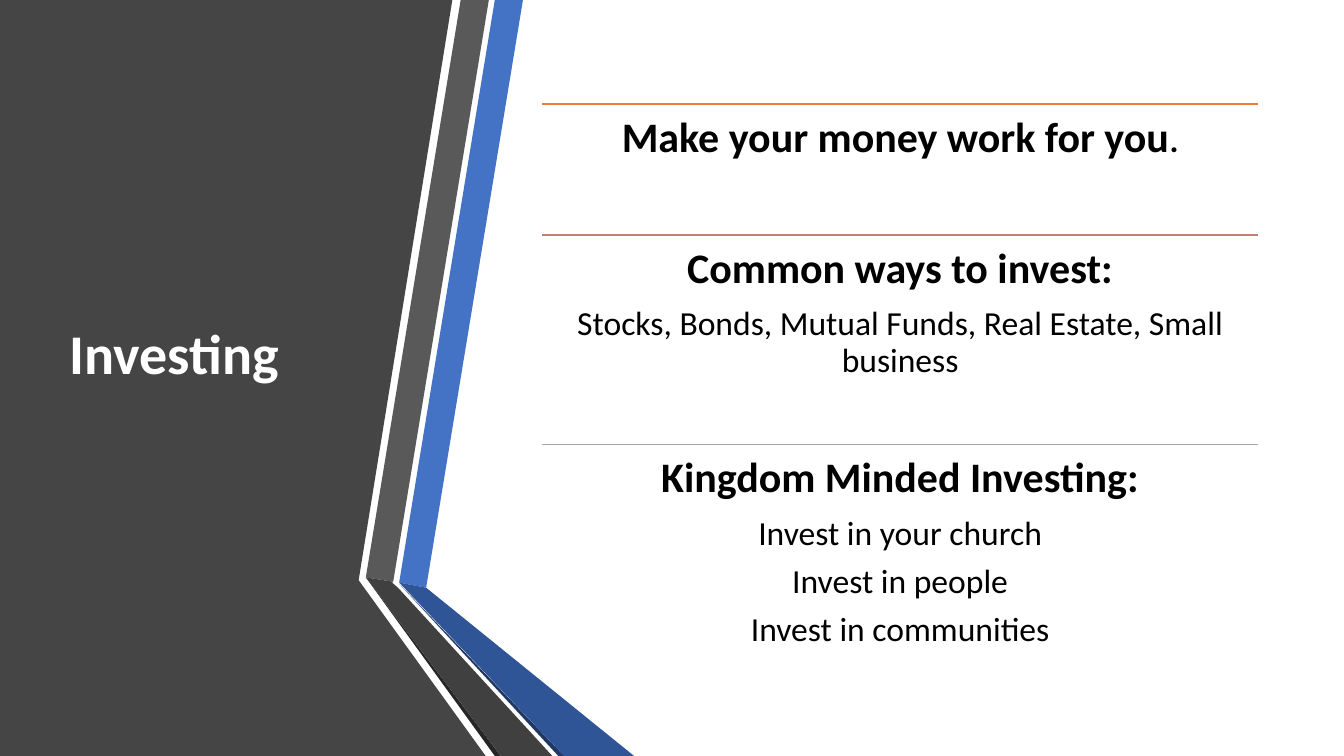
from dataclasses import dataclass
from itertools import pairwise

from pptx import Presentation
from pptx.dml.color import RGBColor
from pptx.enum.shapes import MSO_CONNECTOR as Connector
from pptx.enum.text import MSO_ANCHOR as Anchor, MSO_AUTO_SIZE as AutoSize, PP_ALIGN as Align
from pptx.oxml.ns import qn
from pptx.util import Cm, Pt
from lxml.etree import SubElement


@dataclass(frozen=True)
class Theme:
    font: str = "Calibri"
    title_size: int = 40
    heading_size: int = 30
    body_size: int = 24
    line_width: float = 1
    line_spacing: float = 0.9
    space_ratio: float = 0.35
    inset: float = 0.3
    white: str = "FFFFFF"
    black: str = "000000"
    panel: str = "454545"
    blue: str = "4472C4"
    deep_blue: str = "2F5597"
    navy: str = "203864"
    gray: str = "595959"
    deep_gray: str = "404040"
    charcoal: str = "262626"
    orange: str = "ED7D31"
    clay: str = "C48170"
    silver: str = "A5A5A5"


THEME = Theme()
WIDTH, HEIGHT = 33.87, 19.05
RULE_LEFT, RULE_RIGHT = 13.67, 31.7
SECTION_EDGES = [2.62, 5.92, 11.2, 17.4]


def add_text(para, text, *, size, color=THEME.black, bold=False):
    span = para.add_run()
    span.text = text
    span.font.name = THEME.font
    span.font.size = Pt(size)
    span.font.bold = bold
    span.font.color.rgb = RGBColor.from_string(color)


class Page:
    def __init__(self, deck, theme):
        self.theme = theme
        self.slide = deck.slides.add_slide(deck.slide_layouts[5])
        self.shapes = self.slide.shapes
        fill = self.slide.background.fill
        fill.solid()
        fill.fore_color.rgb = RGBColor.from_string(theme.white)

    def polygon(self, points, color):
        corners = [(Cm(x), Cm(y)) for x, y in points]
        builder = self.shapes.build_freeform(*corners[0])
        builder.add_line_segments(corners[1:], close=True)
        shape = builder.convert_to_shape()
        shape.shadow.inherit = False
        shape.fill.solid()
        shape.fill.fore_color.rgb = RGBColor.from_string(color)
        shape.line.fill.background()

    def title(self, text, left, top, width, height):
        box = self.shapes.title
        box.left, box.top, box.width, box.height = map(Cm, (left, top, width, height))
        tree = box.element.getparent()
        tree.append(box.element)
        frame = box.text_frame
        frame.word_wrap = True
        frame.auto_size = AutoSize.NONE
        frame.vertical_anchor = Anchor.MIDDLE
        para = frame.paragraphs[0]
        para.alignment = Align.LEFT
        para.line_spacing = self.theme.line_spacing
        add_text(para, text, size=self.theme.title_size, color=self.theme.white, bold=True)

    def rule(self, top, color):
        line = self.shapes.add_connector(
            Connector.STRAIGHT, Cm(RULE_LEFT), Cm(top), Cm(RULE_RIGHT), Cm(top))
        line.line.color.rgb = RGBColor.from_string(color)
        line.line.width = Pt(self.theme.line_width)
        SubElement(line.element.spPr, qn("a:effectLst"))

    def section(self, top, bottom, paragraphs):
        box = self.shapes.add_textbox(
            Cm(RULE_LEFT), Cm(top), Cm(RULE_RIGHT - RULE_LEFT), Cm(bottom - top))
        frame = box.text_frame
        frame.word_wrap = True
        frame.vertical_anchor = Anchor.TOP
        frame.margin_left = frame.margin_right = Cm(self.theme.inset)
        frame.margin_top = frame.margin_bottom = Cm(self.theme.inset)
        for index, spans in enumerate(paragraphs):
            para = frame.add_paragraph() if index else frame.paragraphs[0]
            para.alignment = Align.CENTER
            para.line_spacing = self.theme.line_spacing
            para.space_after = Pt(self.theme.space_ratio * spans[0][1]["size"])
            for text, style in spans:
                add_text(para, text, **style)


def main():
    deck = Presentation()
    deck.slide_width, deck.slide_height = Cm(WIDTH), Cm(HEIGHT)
    page = Page(deck, THEME)

    bands = [
        (THEME.panel, [(0, 0), (11.4, 0), (9.04, 14.62), (12.24, HEIGHT), (0, HEIGHT)]),
        (THEME.blue, [(10.06, 14.68), (10.74, 14.81), (13.18, 0), (12.47, 0)]),
        (THEME.gray, [(12.32, 0), (11.61, 0), (9.22, 14.55), (9.91, 14.66)]),
        (THEME.charcoal, [(9.22, 14.55), (12.47, HEIGHT), (12.62, HEIGHT)]),
        (THEME.navy, [(10.06, 14.71), (14.07, HEIGHT), (14.22, HEIGHT)]),
        (THEME.deep_blue, [(10.06, 14.68), (14.22, HEIGHT), (15.98, HEIGHT), (10.74, 14.81)]),
        (THEME.deep_gray, [(13.92, HEIGHT), (10.03, 14.81), (9.88, 14.68), (9.91, 14.66),
                           (9.22, 14.55), (12.62, HEIGHT)]),
    ]
    for color, points in bands:
        page.polygon(points, color)

    page.title("Investing", 1.5, 1.9, 7.72, 14.17)

    heading = {"size": THEME.heading_size, "bold": True}
    body = {"size": THEME.body_size}
    sections = [
        (THEME.orange, [[("Make your money work for you", heading),
                         (".", {"size": THEME.body_size, "bold": True})]]),
        (THEME.clay, [[("Common ways to invest:", heading)],
                      [("Stocks, Bonds, Mutual Funds, Real Estate, Small business", body)]]),
        (THEME.silver, [[("Kingdom Minded Investing:", heading)],
                        [("Invest in your church", body)],
                        [("Invest in people", body)],
                        [("Invest in communities", body)]]),
    ]
    for (top, bottom), (color, paragraphs) in zip(pairwise(SECTION_EDGES), sections):
        page.rule(top, color)
        page.section(top, bottom, paragraphs)

    deck.save("out.pptx")


if __name__ == "__main__":
    main()
